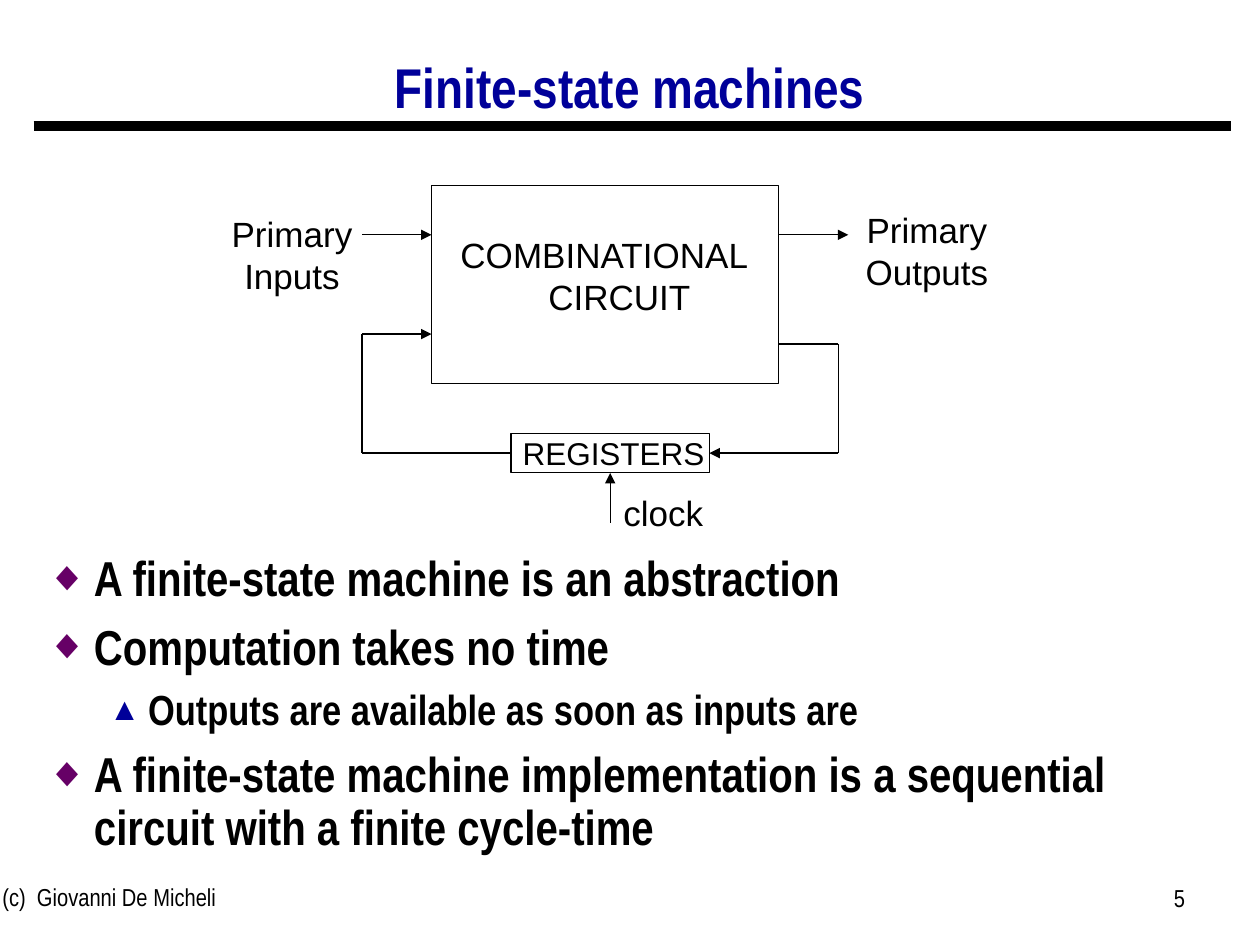
import pptx
import pptx.util
import pptx.dml.color
import pptx.enum.shapes
import pptx.enum.text
import pptx.oxml
import pptx.oxml.ns

COLUMNS = 127  # grid columns across the slide; cells are square
CELL = pptx.util.Inches(10) / COLUMNS
ALIGN = pptx.enum.text.PP_ALIGN
ANCHOR = pptx.enum.text.MSO_ANCHOR
BLACK, NAVY, PURPLE = "000000", "000099", "660066"
BOTTOM, LEFT, RIGHT = 2, 1, 3


def color(value):
    return pptx.dml.color.RGBColor.from_string(value)


def cells(*counts):
    return [round(count * CELL) for count in counts]


def add_element(parent, tag, **attributes):
    element = pptx.oxml.parse_xml(f"<a:{tag} {pptx.oxml.ns.nsdecls('a')}/>")
    for key, value in attributes.items():
        element.set(key, str(value))
    parent.append(element)
    return element


def add_text_box(slide, box, anchor=ANCHOR.TOP):
    frame = slide.shapes.add_textbox(*cells(*box)).text_frame
    frame.word_wrap = True
    frame.vertical_anchor = anchor
    return frame


def write(paragraph, text, size, font="Arial", ink=BLACK, bold=False, align=ALIGN.LEFT):
    paragraph.alignment = align
    run = paragraph.add_run()
    run.text = text
    run.font.name = font
    run.font.size = pptx.util.Pt(size)
    run.font.bold = bold
    run.font.color.rgb = color(ink)


def indent(paragraph, margin, first):
    properties = paragraph._p.get_or_add_pPr()
    properties.set("marL", str(pptx.util.Inches(margin)))
    properties.set("indent", str(pptx.util.Inches(first)))
    return properties


def add_line(slide, start, end, width=0.75, arrow=False, begin=None, finish=None):
    line = slide.shapes.add_connector(
        pptx.enum.shapes.MSO_CONNECTOR.STRAIGHT, *cells(*start, *end))
    if begin:
        line.begin_connect(*begin)
    if finish:
        line.end_connect(*finish)
    line.line.width = pptx.util.Pt(width)
    line.line.color.rgb = color(BLACK)
    if arrow:
        add_element(line.line._get_or_add_ln(), "tailEnd", type="triangle")
    add_element(line._element.spPr, "effectLst")


def add_block(slide, box):
    block = slide.shapes.add_shape(
        pptx.enum.shapes.MSO_SHAPE.RECTANGLE, *cells(*box))
    block.shadow.inherit = False
    block.fill.background()
    block.line.color.rgb = color(BLACK)
    block.line.width = pptx.util.Pt(0.75)
    return block


def header(slide, box):
    left, top, width, height = box
    # Rule under the title
    rule = top + 10
    add_line(slide, (left, rule), (left + width, rule), width=6)
    # Title
    frame = add_text_box(slide, (left + 6.1, top, 108, height), ANCHOR.MIDDLE)
    title = frame.paragraphs[0]
    title.line_spacing = 0.9
    write(title, "Finite-state machines", 32, "Arial Narrow", NAVY, True, ALIGN.CENTER)


def state_machine(slide, box):
    left, top, width, _ = box
    unit = width / 49  # the diagram is 49 units wide

    def at(x, y):
        return left + x * unit, top + y * unit

    def area(x, y, w, h):
        return (*at(x, y), w * unit, h * unit)

    # Blocks
    add_block(slide, area(7, 0, 35, 20))
    registers = add_block(slide, area(15, 25, 20, 4))

    # Labels: area, words, size, first-line indent, anchor
    labels = [
        ((1, 24.5, 36, 5), "REGISTERS", 18, -0.25, ANCHOR.MIDDLE),
        ((-10, 4.2, 56, 9.8), "COMBINATIONAL CIRCUIT", 20, -0.25, ANCHOR.TOP),
        ((-33, 2.1, 36, 9.8), "Primary Inputs", 20, 0, ANCHOR.TOP),
        ((32, 1.7, 34, 10.5), "Primary Outputs", 20, 0, ANCHOR.TOP),
        ((10, 30.2, 28, 5.5), "clock", 20, -0.25, ANCHOR.TOP),
    ]
    for place, words, size, first, anchor in labels:
        label = add_text_box(slide, area(*place), anchor).paragraphs[0]
        indent(label, 1.25, first)
        write(label, words, size, align=ALIGN.CENTER)

    # Primary input and output
    add_line(slide, at(0, 5), at(7, 5), arrow=True)
    add_line(slide, at(42, 5), at(49, 5), arrow=True)
    # Next state, from circuit to registers
    add_line(slide, at(42, 16), at(48, 16))
    add_line(slide, at(48, 16), at(48, 27))
    add_line(slide, at(48, 27), at(35, 27), arrow=True, finish=(registers, RIGHT))
    # Present state, from registers back to circuit
    add_line(slide, at(15, 27), at(0, 27), begin=(registers, LEFT))
    add_line(slide, at(0, 15), at(0, 27))
    add_line(slide, at(0, 15), at(7, 15), arrow=True)
    # Clock
    add_line(slide, at(25, 34), at(25, 29), arrow=True, finish=(registers, BOTTOM))


def key_points(slide, box):
    # Level: size, margin, first-line indent, bullet, bullet colour, bullet size
    levels = [
        (28, 0.38, -0.38, "◆", PURPLE, 85),
        (24, 0.81, -0.31, "▲", NAVY, 75),
    ]
    points = [
        (0, "A finite-state machine is an abstraction"),
        (0, "Computation takes no time"),
        (1, "Outputs are available as soon as inputs are"),
        (0, "A finite-state machine implementation is a sequential "
            "circuit with a finite cycle-time"),
    ]
    frame = add_text_box(slide, box)
    frame.margin_top = pptx.util.Inches(0.51)
    for number, (level, words) in enumerate(points):
        size, margin, first, bullet, ink, share = levels[level]
        point = frame.add_paragraph() if number else frame.paragraphs[0]
        point.level = level
        point.line_spacing = 0.9
        point.space_before = pptx.util.Pt(size * 0.32 if number else 0)
        properties = indent(point, margin, first)
        add_element(add_element(properties, "buClr"), "srgbClr", val=ink)
        add_element(properties, "buSzPct", val=share * 1000)
        add_element(properties, "buFont", typeface="Arial")
        add_element(properties, "buChar", char=bullet)
        write(point, words, size, "Arial Narrow", bold=True)


def footer(slide, box):
    left, top, width, height = box
    credit = add_text_box(slide, (left, top, 40.3, height)).paragraphs[0]
    write(credit, "(c)  Giovanni De Micheli", 14, "Arial Narrow")
    page = add_text_box(slide, (left + width - 29.6, top + 0.1, 29.6, height))
    write(page.paragraphs[0], "5", 14, "Arial Narrow", align=ALIGN.RIGHT)


def main():
    deck = pptx.Presentation()
    deck.slide_width = pptx.util.Inches(10)
    deck.slide_height = pptx.util.Inches(7.5)
    slide = deck.slides.add_slide(deck.slide_layouts[6])
    header(slide, (3.4, 2.7, 120.7, 12.8))
    state_machine(slide, (36.5, 18.67, 49, 34))
    key_points(slide, (3.4, 49.4, 120.8, 39.4))
    footer(slide, (-1, 88.3, 121.7, 6.6))
    deck.save("out.pptx")


if __name__ == "__main__":
    main()
